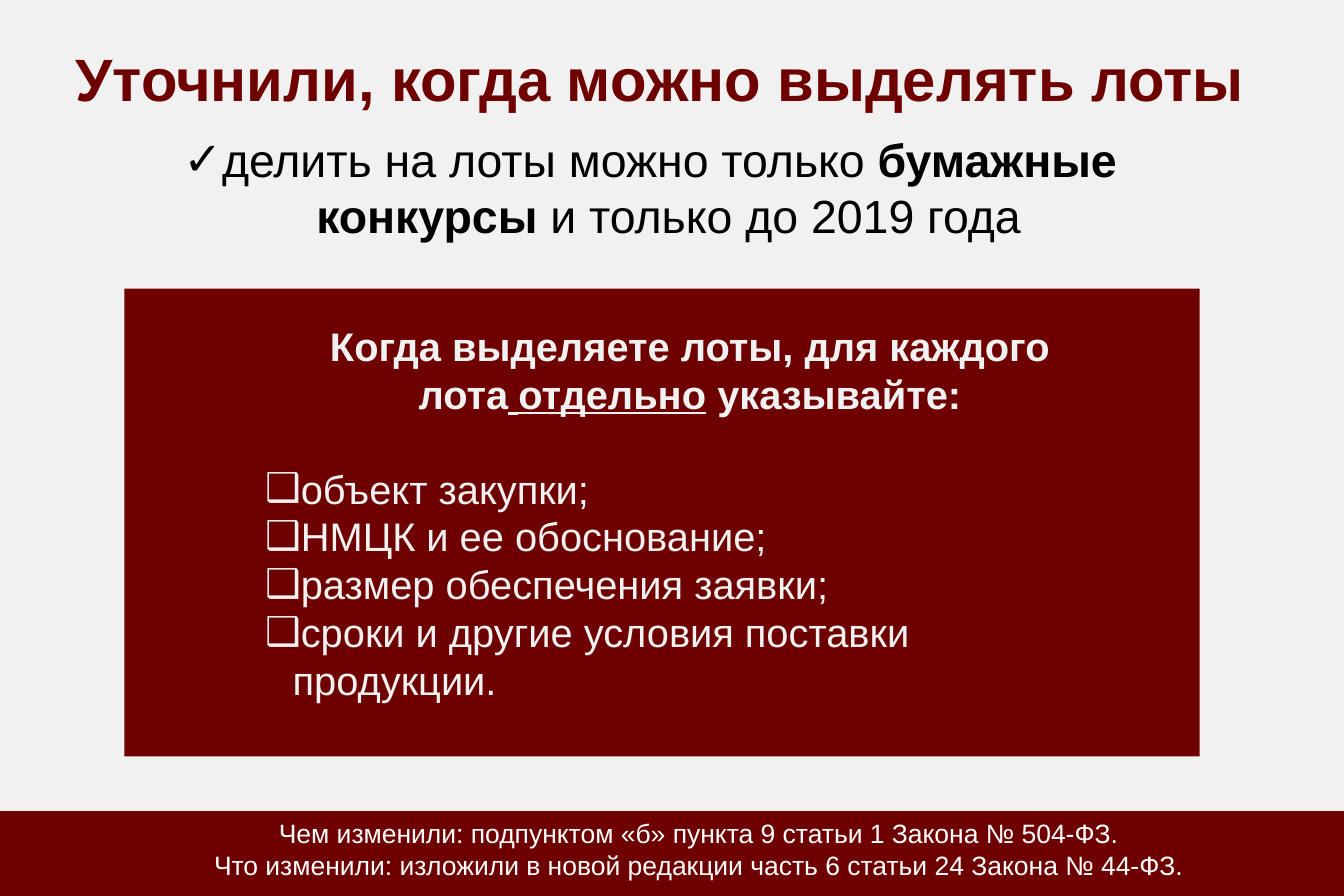
from pptx import Presentation
from pptx.dml.color import RGBColor
from pptx.enum.shapes import MSO_SHAPE
from pptx.enum.text import MSO_ANCHOR, MSO_AUTO_SIZE, PP_ALIGN
from pptx.oxml.ns import qn
from pptx.util import Inches, Pt
from lxml import etree

RECTANGLE = MSO_SHAPE.RECTANGLE
TOP = MSO_ANCHOR.TOP
FIXED = MSO_AUTO_SIZE.NONE
LEFT, CENTER = PP_ALIGN.LEFT, PP_ALIGN.CENTER
MAROON, PALE, BLACK, WHITE = "6F0000", "F1F1F1", "000000", "FFFFFF"
LIST_ITEMS = [
    "объект закупки;",
    "НМЦК и ее обоснование;",
    "размер обеспечения заявки;",
    "сроки и другие условия поставки продукции.",
]
FOOTER_LINES = [
    "Чем изменили: подпунктом «б» пункта 9 статьи 1 Закона № 504-ФЗ.",
    "Что изменили: изложили в новой редакции часть 6 статьи 24 Закона № 44-ФЗ.",
]


def color(value):
    return RGBColor.from_string(value)


class SlideBuilder:
    font_name = "Arial"

    def __init__(self, deck):
        self.width, self.height = deck.slide_width, deck.slide_height
        self.page = deck.slides.add_slide(deck.slide_layouts[1])

    def area(self, left, top, width, height):
        return (
            int(self.width * left / 100),
            int(self.height * top / 100),
            int(self.width * width / 100),
            int(self.height * height / 100),
        )

    def block(self, fill, *shares):
        shape = self.page.shapes.add_shape(RECTANGLE, *self.area(*shares))
        shape.shadow.inherit = False
        shape.fill.solid()
        shape.fill.fore_color.rgb = color(fill)
        shape.line.fill.background()

    def text_box(self, *shares):
        return self.frame(self.page.shapes.add_textbox(*self.area(*shares)))

    def placeholder(self, index, *shares):
        box = self.page.placeholders[index]
        box.left, box.top, box.width, box.height = self.area(*shares)
        self.page.shapes._spTree.append(box._element)
        return self.frame(box)

    def frame(self, box):
        frame = box.text_frame
        frame.word_wrap = True
        frame.auto_size = FIXED
        frame.vertical_anchor = TOP
        frame.margin_left = frame.margin_right = frame.margin_bottom = 0
        frame.margin_top = Inches(0.02)
        return frame

    def paragraph(self, frame, spans, size, ink, bold=False, align=CENTER,
                  bullet=None, margin=0, indent=0, before=0):
        first = not frame.paragraphs[0].runs
        para = frame.paragraphs[0] if first else frame.add_paragraph()
        properties = para._p.get_or_add_pPr()
        properties.set("marL", str(Inches(margin)))
        properties.set("indent", str(Inches(indent)))
        if bullet:
            font = etree.SubElement(properties, qn("a:buFont"))
            font.set("typeface", self.font_name)
            etree.SubElement(properties, qn("a:buChar")).set("char", bullet)
        else:
            etree.SubElement(properties, qn("a:buNone"))
        para.alignment = align
        para.line_spacing = 1.0
        para.space_before, para.space_after = Pt(before), Pt(0)
        para.font.name = self.font_name
        para.font.size = Pt(size)
        para.font.bold = bold
        para.font.color.rgb = color(ink)
        for text, changes in spans:
            span = para.add_run()
            span.text = text
            for name, value in changes.items():
                setattr(span.font, name, value)


def main():
    deck = Presentation()
    deck.slide_width, deck.slide_height = Inches(11.25), Inches(7.5)
    builder = SlideBuilder(deck)
    builder.block(PALE, 0, 0, 100, 90.53)
    builder.block(MAROON, 0, 90.53, 100, 9.47)
    builder.block(MAROON, 9.26, 32.22, 80, 52.2)

    title = builder.placeholder(0, 3.78, 4.4, 90.67, 8.13)
    builder.paragraph(title, [("Уточнили, когда можно выделять лоты", {})],
                      36, MAROON, bold=True)

    rule = builder.text_box(9.26, 14.4, 78.13, 12.67)
    builder.paragraph(rule, [
        ("делить на лоты можно только ", {}),
        ("бумажные конкурсы ", {"bold": True}),
        ("и только до 2019 года", {}),
    ], 28, BLACK, bullet="✓", margin=0.32, indent=-0.31)

    requirements = builder.placeholder(1, 14.4, 35.6, 66.49, 42.8)
    builder.paragraph(requirements, [
        ("Когда выделяете лоты, для каждого лота", {}),
        (" ", {"name": "Times New Roman", "bold": False, "underline": True}),
        ("отдельно", {"underline": True}),
        (" указывайте:", {}),
    ], 24, PALE, bold=True, margin=0.83)
    for number, item in enumerate(LIST_ITEMS):
        builder.paragraph(requirements, [(item, {})], 24, PALE, align=LEFT,
                          bullet="❑", margin=0.83, indent=-0.23,
                          before=0 if number else 28.5)

    footer = builder.text_box(15.56, 90.93, 72.89, 7.33)
    for line in FOOTER_LINES:
        builder.paragraph(footer, [(line, {})], 16, WHITE)
    deck.save("out.pptx")


if __name__ == "__main__":
    main()
